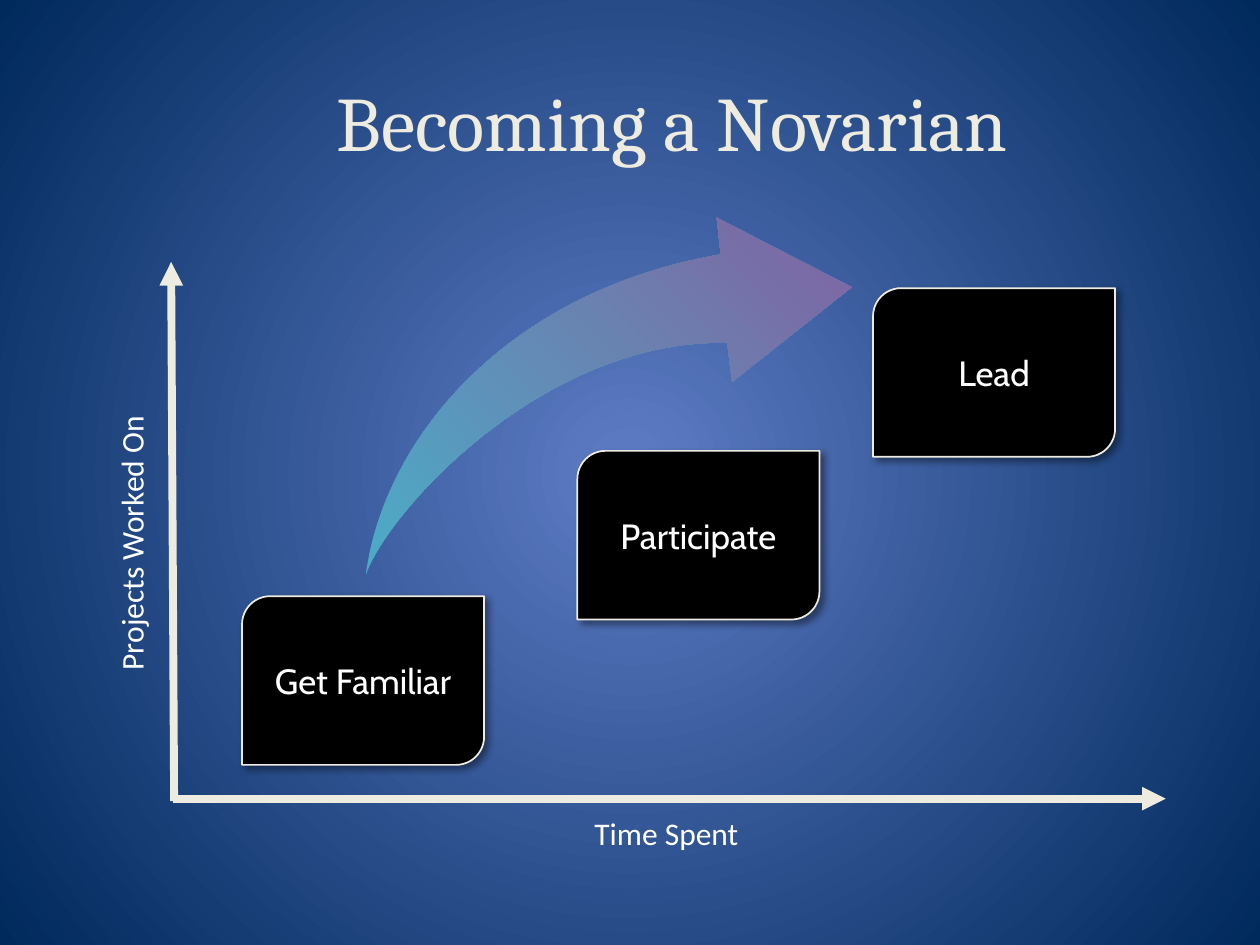
from dataclasses import dataclass

from lxml import etree
from pptx import Presentation
from pptx import util as u
from pptx.dml.color import RGBColor
from pptx.enum import shapes, text
from pptx.oxml.ns import qn


@dataclass(frozen=True)
class Theme:
    centre: str = "5E7CC5"
    edge: str = "00295C"
    cream: str = "EEECE1"
    white: str = "FFFFFF"
    black: str = "000000"
    teal: str = "4BACC6"
    purple: str = "8064A2"
    title_font: str = "Cambria"
    label_font: str = "Calibri"
    step_font: str = "Cabin"
    title_size: int = 44
    label_size: int = 18
    step_size: int = 20
    axis_width: float = 4.5


def cm(*values):
    return [u.Cm(value) for value in values]


def bezier(start, control_1, control_2, end, steps=40):
    """Return the points after start along a cubic curve."""
    points = []
    for step in range(1, steps + 1):
        t = step / steps
        weights = ((1 - t) ** 3, 3 * t * (1 - t) ** 2, 3 * t * t * (1 - t), t ** 3)
        corners = (start, control_1, control_2, end)
        points.append(tuple(sum(w * c[axis] for w, c in zip(weights, corners))
                            for axis in (0, 1)))
    return points


class SlideBuilder:
    def __init__(self, slide, theme):
        self.slide = slide
        self.theme = theme

    def gradient(self, fill, first, last):
        fill.gradient()
        for stop, color, position in zip(fill.gradient_stops, (first, last), (0, 1)):
            stop.color.rgb = RGBColor.from_string(color)
            stop.position = position

    def background(self):
        """Fill the slide with a gradient that spreads from its middle."""
        self.gradient(self.slide.background.fill, self.theme.centre, self.theme.edge)
        gradient = self.slide.element.find(".//" + qn("a:gradFill"))
        gradient.remove(gradient.find(qn("a:lin")))
        circle = etree.SubElement(gradient, qn("a:path"), {"path": "circle"})
        etree.SubElement(circle, qn("a:fillToRect"),
                         {side: "50000" for side in "ltrb"})

    def set_text(self, shape, wording, font, size, color):
        frame = shape.text_frame
        frame.word_wrap = True
        paragraph = frame.paragraphs[0]
        paragraph.text = wording
        paragraph.alignment = text.PP_ALIGN.CENTER
        paragraph.font.name = font
        paragraph.font.size = u.Pt(size)
        paragraph.font.color.rgb = RGBColor.from_string(color)
        return frame

    def title(self, wording, *box):
        shape = self.slide.shapes.add_textbox(*cm(*box))
        frame = self.set_text(shape, wording, self.theme.title_font,
                              self.theme.title_size, self.theme.cream)
        frame.vertical_anchor = text.MSO_ANCHOR.MIDDLE

    def axis_label(self, wording, *box, rotation=0):
        shape = self.slide.shapes.add_textbox(*cm(*box))
        shape.rotation = rotation
        self.set_text(shape, wording, self.theme.label_font,
                      self.theme.label_size, self.theme.white)

    def axis(self, *ends):
        connector = self.slide.shapes.add_connector(
            shapes.MSO_CONNECTOR.STRAIGHT, *cm(*ends))
        connector.line.color.rgb = RGBColor.from_string(self.theme.cream)
        connector.line.width = u.Pt(self.theme.axis_width)
        properties = connector.element.spPr
        etree.SubElement(properties.find(qn("a:ln")), qn("a:tailEnd"),
                         {"type": "triangle"})
        etree.SubElement(properties, qn("a:effectLst"))

    def step(self, wording, left, top, width=4.88, height=3.4):
        shape = self.slide.shapes.add_shape(
            shapes.MSO_SHAPE.ROUND_2_DIAG_RECTANGLE, *cm(left, top, width, height))
        shape.fill.solid()
        shape.fill.fore_color.rgb = RGBColor.from_string(self.theme.black)
        shape.line.color.rgb = RGBColor.from_string(self.theme.cream)
        shape.line.width = u.Pt(1)
        self.drop_shadow(shape)
        frame = self.set_text(shape, wording, self.theme.step_font,
                              self.theme.step_size, self.theme.white)
        frame.vertical_anchor = text.MSO_ANCHOR.MIDDLE
        frame.margin_left = frame.margin_right = u.Cm(0.13)
        frame.margin_top = frame.margin_bottom = u.Cm(0.13)

    def drop_shadow(self, shape):
        shape.shadow.inherit = False
        effects = shape.element.spPr.find(qn("a:effectLst"))
        shadow = etree.SubElement(effects, qn("a:outerShdw"), {
            "blurRad": str(u.Pt(4)), "dist": str(u.Pt(3)),
            "dir": str(45 * 60000), "rotWithShape": "0"})
        color = etree.SubElement(shadow, qn("a:srgbClr"), {"val": self.theme.black})
        etree.SubElement(color, qn("a:alpha"), {"val": "40000"})

    def swoosh(self, points):
        start, *rest = [tuple(cm(*point)) for point in points]
        builder = self.slide.shapes.build_freeform(*start)
        builder.add_line_segments(rest, close=True)
        shape = builder.convert_to_shape()
        self.gradient(shape.fill, self.theme.teal, self.theme.purple)
        shape.fill.gradient_angle = 45
        shape.line.fill.background()
        shape.shadow.inherit = False


def main():
    presentation = Presentation()
    presentation.slide_width, presentation.slide_height = cm(25.4, 19.05)
    slide = presentation.slides.add_slide(presentation.slide_layouts[6])
    builder = SlideBuilder(slide, Theme())

    builder.background()
    builder.axis(3.48, 16.1, 23.5, 16.1)
    builder.axis(3.51, 16.15, 3.45, 5.28)
    builder.axis_label("Time Spent", 4.01, 16.28, 18.85, 1.02)
    builder.axis_label("Projects Worked On", -2.51, 10.44, 10.31, 1.02, rotation=270)
    builder.title("Becoming a Novarian", 2.34, 0.84, 22.43, 3.18)

    for wording, left, top in (("Get Familiar", 4.88, 12.02),
                               ("Participate", 11.64, 9.09),
                               ("Lead", 17.6, 5.81)):
        builder.step(wording, left, top)

    tail, neck_top, neck_bottom = (7.37, 11.61), (14.53, 5.13), (14.66, 6.91)
    head = [(14.45, 4.39), (17.17, 5.79), (14.76, 7.7), neck_bottom]
    builder.swoosh([tail,
                    *bezier(tail, (7.75, 8.81), (10.24, 5.87), neck_top),
                    *head,
                    *bezier(neck_bottom, (10.97, 6.83), (7.8, 10.31), tail)])

    presentation.save("out.pptx")


if __name__ == "__main__":
    main()
